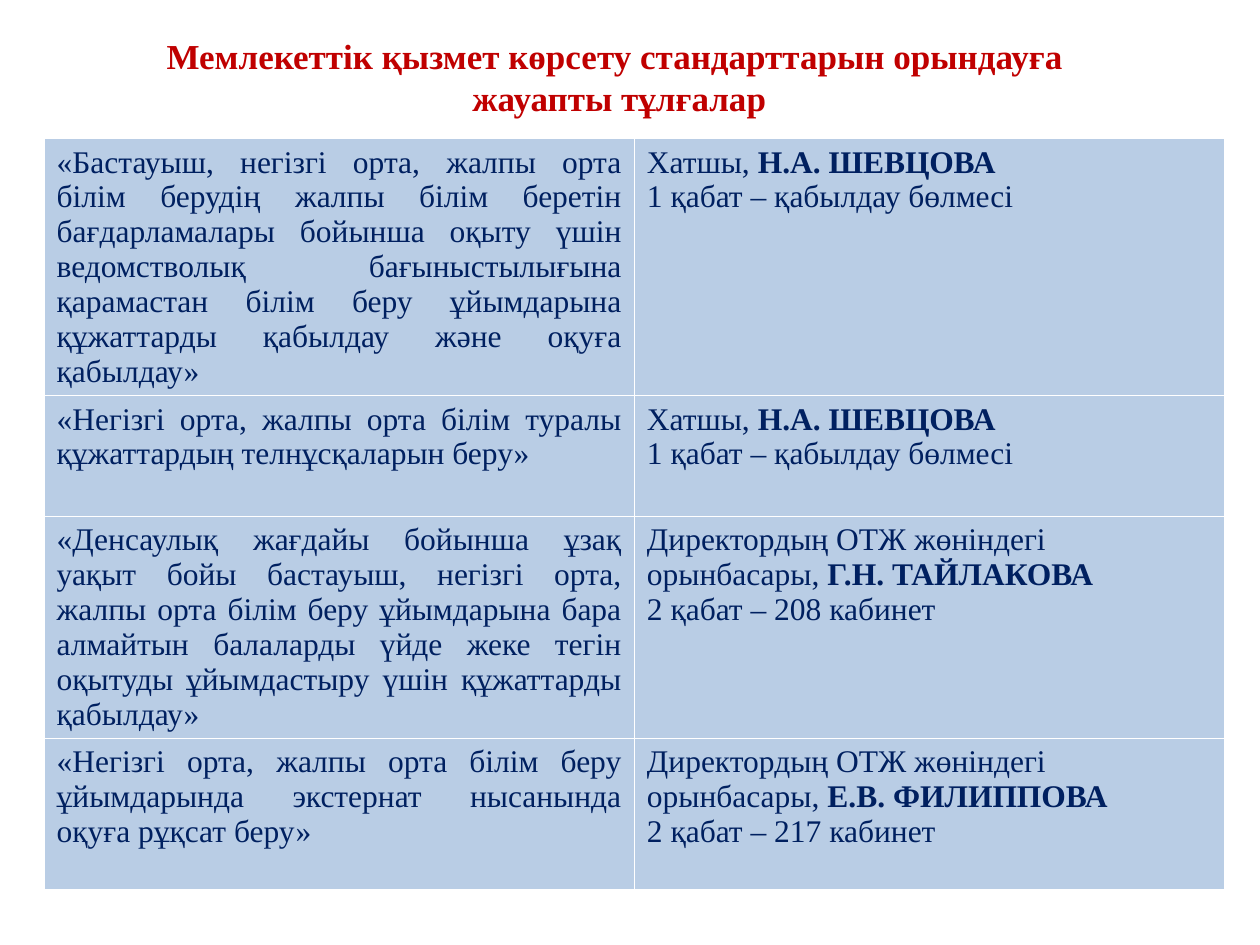
"""Build a slide listing the people responsible for public service standards."""
from pptx import Presentation
from pptx.dml.color import RGBColor
from pptx.enum.text import MSO_ANCHOR, PP_ALIGN
from pptx.util import Inches, Pt

LEFT, CENTER, JUSTIFY = PP_ALIGN.LEFT, PP_ALIGN.CENTER, PP_ALIGN.JUSTIFY
MIDDLE = MSO_ANCHOR.MIDDLE
NAVY = RGBColor(0x00, 0x20, 0x60)
RED = RGBColor(0xC0, 0x00, 0x00)
BLUE = RGBColor(0xB9, 0xCD, 0xE5)
FONT = "Times New Roman"

TITLE = ["Мемлекеттік қызмет көрсету стандарттарын орындауға ", "жауапты тұлғалар"]
CLERK = "Хатшы, "
DEPUTY = "Директордың ОТЖ жөніндегі орынбасары, "
DESK = "1 қабат – қабылдау бөлмесі"
DUTIES = [
    ("«Бастауыш, негізгі орта, жалпы орта білім берудің жалпы білім беретін "
     "бағдарламалары бойынша оқыту үшін ведомстволық бағыныстылығына қарамастан "
     "білім беру ұйымдарына құжаттарды қабылдау және оқуға қабылдау»",
     CLERK, "Н.А. ШЕВЦОВА", DESK, 2.04),
    ("«Негізгі орта, жалпы орта білім туралы құжаттардың телнұсқаларын беру»",
     CLERK, "Н.А. ШЕВЦОВА", DESK, 0.96),
    ("«Денсаулық жағдайы бойынша ұзақ уақыт бойы бастауыш, негізгі орта, жалпы "
     "орта білім беру ұйымдарына бара алмайтын балаларды үйде жеке тегін оқытуды "
     "ұйымдастыру үшін құжаттарды қабылдау»",
     DEPUTY, "Г.Н. ТАЙЛАКОВА", "2 қабат – 208 кабинет", 1.76),
    ("«Негізгі орта, жалпы орта білім беру ұйымдарында экстернат нысанында "
     "оқуға рұқсат беру»",
     DEPUTY, "Е.В. ФИЛИППОВА", "2 қабат – 217 кабинет", 1.2),
]


def write(frame, lines, size=18, color=NAVY, align=LEFT):
    """Fill a text frame with lines, each a list of (text, bold) runs."""
    frame.word_wrap = True
    for num, line in enumerate(lines):
        para = frame.add_paragraph() if num else frame.paragraphs[0]
        para.alignment = align
        for text, bold in line:
            run = para.add_run()
            run.text = text
            run.font.name, run.font.size = FONT, Pt(size)
            run.font.bold = bold
            run.font.color.rgb = color


def main():
    deck = Presentation()
    deck.slide_width, deck.slide_height = Inches(10), Inches(7.5)
    slide = deck.slides.add_slide(deck.slide_layouts[6])

    left, width = Inches(0.35), Inches(9.37)
    height = Inches(sum(duty[-1] for duty in DUTIES))
    table = slide.shapes.add_table(
        len(DUTIES), 2, left, Inches(1.1), width, height).table
    for row, (duty, post, name, room, tall) in enumerate(DUTIES):
        table.rows[row].height = Inches(tall)
        task, person = table.cell(row, 0), table.cell(row, 1)
        write(task.text_frame, [[(duty, False)]], align=JUSTIFY)
        write(person.text_frame, [[(post, False), (name, True)], [(room, False)]])
        for cell in (task, person):
            cell.fill.solid()
            cell.fill.fore_color.rgb = BLUE

    head = slide.shapes.add_textbox(left, Inches(0.22), Inches(9.13), Inches(0.77))
    head.text_frame.vertical_anchor = MIDDLE
    write(head.text_frame, [[(line, True)] for line in TITLE],
          size=20, color=RED, align=CENTER)
    deck.save("out.pptx")


if __name__ == "__main__":
    main()
